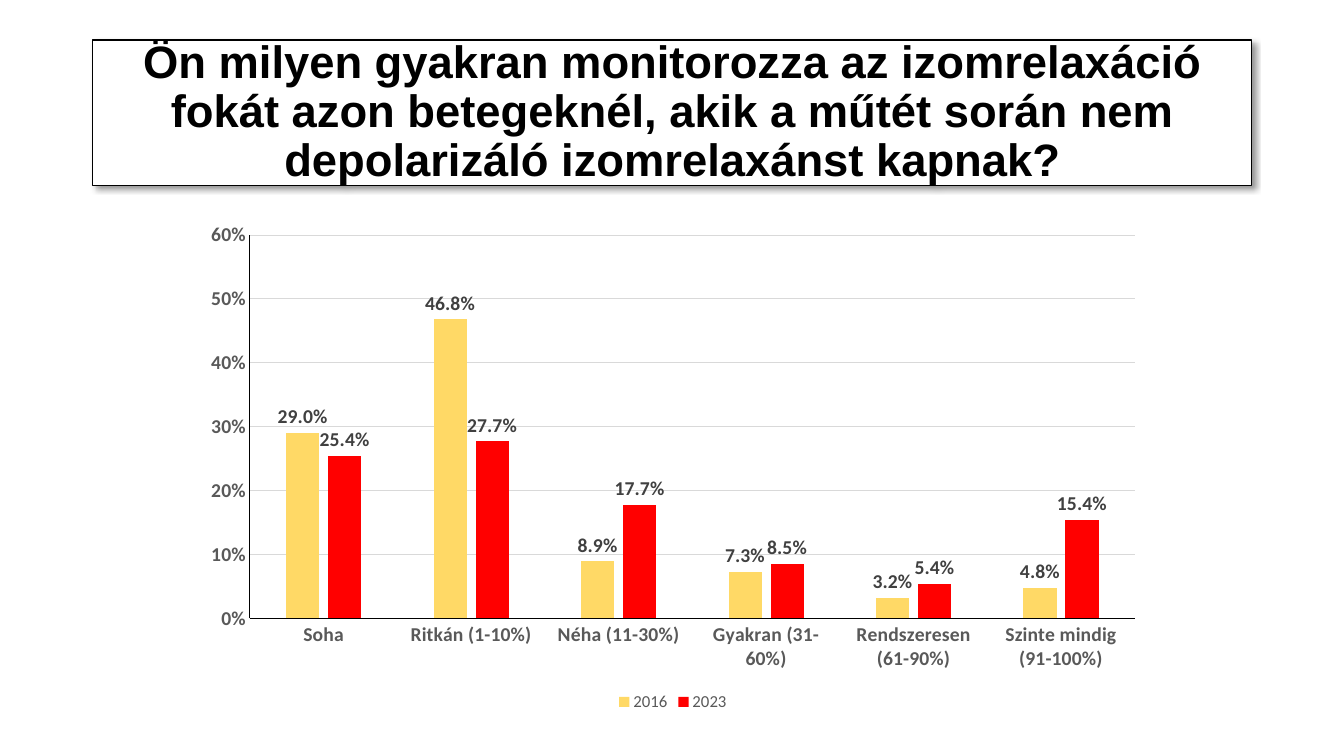
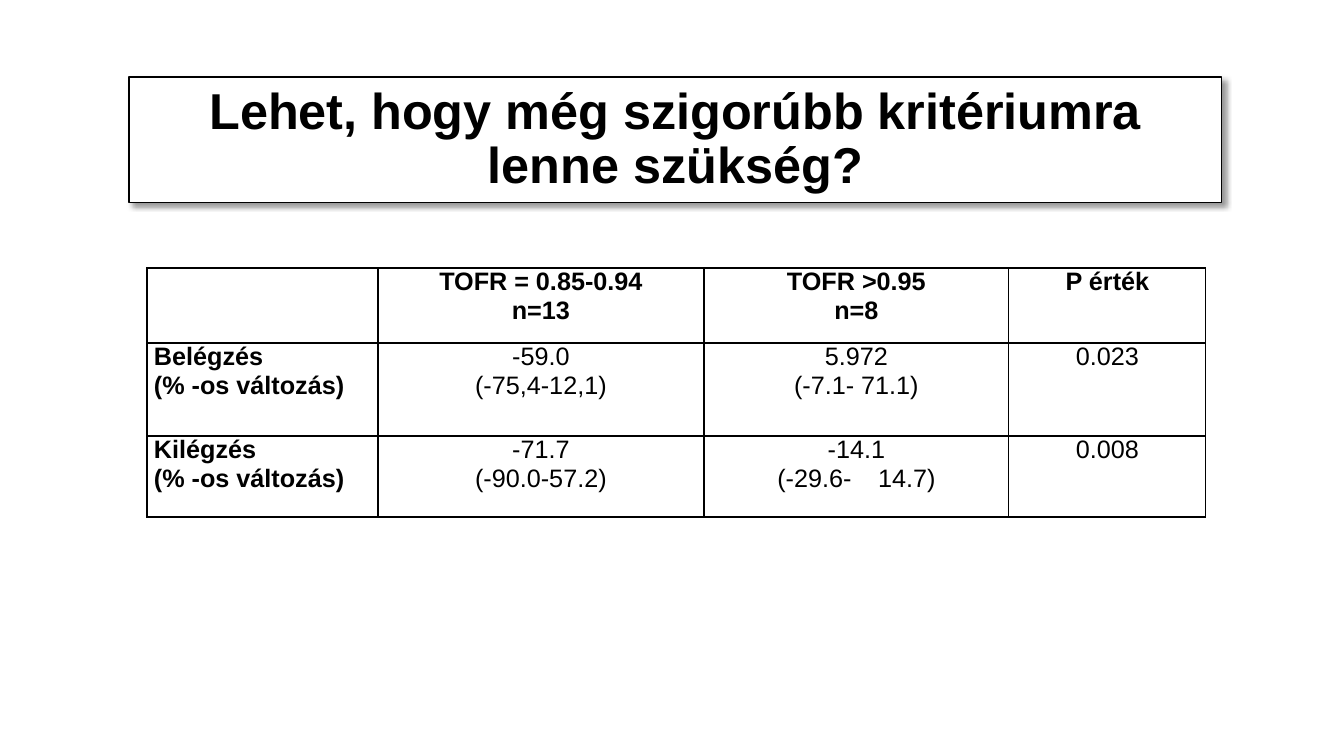
from lxml import etree
from pptx import Presentation
from pptx.chart.data import CategoryChartData
from pptx.dml.color import RGBColor
from pptx.enum.chart import (XL_CHART_TYPE, XL_LABEL_POSITION as LabelPos,
                             XL_LEGEND_POSITION as LegendPos, XL_TICK_MARK as Tick)
from pptx.enum.text import MSO_ANCHOR as Anchor, MSO_AUTO_SIZE as AutoSize, PP_ALIGN as Align
from pptx.oxml import parse_xml
from pptx.oxml.ns import nsdecls, qn
from pptx.util import Pt

SLIDE_W, SLIDE_H = 1344, 756
PX = 12192000 / SLIDE_W
TITLE_ONLY = 5

COLORS = {
    "white": "FFFFFF", "black": "000000", "grid": "D9D9D9",
    "axis_text": "595959", "label_text": "404040",
    "yellow": "FFD966", "red": "FF0000",
}

FREQUENCY = {
    "title": "Ön milyen gyakran monitorozza az izomrelaxáció fokát azon betegeknél, "
             "akik a műtét során nem depolarizáló izomrelaxánst kapnak?",
    "title_size": 32.4,
    "title_box": (93, 40, 1159, 146),
    "chart_box": (192, 213, 962, 503),
    "categories": ["Soha", "Ritkán (1-10%)", "Néha (11-30%)", "Gyakran (31-60%)",
                   "Rendszeresen (61-90%)", "Szinte mindig (91-100%)"],
    "series": [
        ("2016", "yellow", [0.29, 0.468, 0.089, 0.073, 0.032, 0.048]),
        ("2023", "red", [0.254, 0.277, 0.177, 0.085, 0.054, 0.154]),
    ],
}

CRITERION = {
    "title": "Lehet, hogy még szigorúbb kritériumra lenne szükség?",
    "title_size": 36,
    "title_box": (129, 77, 1093, 126),
    "table_at": (147, 268),
    "col_widths": [231, 326, 305, 197],
    "row_heights": [75, 93, 81],
    "rows": [
        ["", "TOFR = 0.85-0.94\nn=13", "TOFR >0.95\nn=8", "P érték"],
        ["Belégzés\n(% -os változás)", "-59.0\n(-75,4-12,1)", "5.972\n(-7.1- 71.1)", "0.023"],
        ["Kilégzés\n(% -os változás)", "-71.7\n(-90.0-57.2)", "-14.1\n(-29.6-\t14.7)", "0.008"],
    ],
}


def px(n):
    return round(n * PX)


def rgb(name):
    return RGBColor.from_string(COLORS[name])


def style_font(font, size, color="black", bold=False, name="Arial"):
    font.name, font.size, font.bold = name, Pt(size), bold
    font.color.rgb = rgb(color)


def style_line(line, color="black", width=0.75):
    line.color.rgb = rgb(color)
    line.width = Pt(width)


def write(tf, text, align=Align.LEFT, spacing=None, **font):
    """Fill a text frame, one paragraph per line of text."""
    for i, line in enumerate(text.split("\n")):
        p = tf.add_paragraph() if i else tf.paragraphs[0]
        p.alignment = align
        if spacing:
            p.line_spacing = spacing
        r = p.add_run()
        r.text = line
        style_font(r.font, **font)


def add_shadow(shape):
    shape.shadow.inherit = False
    effects = shape.element.spPr.find(qn("a:effectLst"))
    effects.append(parse_xml(
        f'<a:outerShdw {nsdecls("a")} blurRad="{Pt(4)}" dist="{Pt(3)}" dir="{45 * 60000}" '
        f'algn="tl" rotWithShape="0"><a:srgbClr val="{COLORS["black"]}">'
        '<a:alpha val="40000"/></a:srgbClr></a:outerShdw>'))


def add_titled_slide(prs, content):
    s = prs.slides.add_slide(prs.slide_layouts[TITLE_ONLY])
    title = s.shapes.title
    title.left, title.top, title.width, title.height = map(px, content["title_box"])
    title.fill.solid()
    title.fill.fore_color.rgb = rgb("white")
    style_line(title.line)
    add_shadow(title)
    tf = title.text_frame
    tf.word_wrap, tf.auto_size = True, AutoSize.NONE
    tf.vertical_anchor = Anchor.MIDDLE
    write(tf, content["title"], align=Align.CENTER, spacing=0.9,
          size=content["title_size"], bold=True)
    return s


def add_frequency_chart(s, content):
    data = CategoryChartData(number_format="0.0%")
    data.categories = content["categories"]
    for name, _, values in content["series"]:
        data.add_series(name, values)
    chart = s.shapes.add_chart(XL_CHART_TYPE.COLUMN_CLUSTERED,
                               *map(px, content["chart_box"]), data).chart
    chart.has_title = False
    style_font(chart.font, 10, name="Calibri")

    for axis in (chart.category_axis, chart.value_axis):
        axis.major_tick_mark = axis.minor_tick_mark = Tick.NONE
        style_font(axis.tick_labels.font, 14, "axis_text", True, "Calibri")
        style_line(axis.format.line)
    axis = chart.value_axis
    axis.minimum_scale, axis.maximum_scale, axis.major_unit = 0, 0.6, 0.1
    axis.tick_labels.number_format = "0%"
    axis.tick_labels.number_format_is_linked = False
    style_line(axis.major_gridlines.format.line, "grid")

    chart.has_legend = True
    chart.legend.position = LegendPos.BOTTOM
    chart.legend.include_in_layout = False
    style_font(chart.legend.font, 12, "axis_text", name="Calibri")

    plot = chart.plots[0]
    plot.gap_width, plot.overlap, plot.vary_by_categories = 219, -27, False
    for series, (_, color, _) in zip(plot.series, content["series"]):
        series.format.fill.solid()
        series.format.fill.fore_color.rgb = rgb(color)
        labels = series.data_labels
        labels.show_value, labels.position = True, LabelPos.OUTSIDE_END
        labels.number_format, labels.number_format_is_linked = "0.0%", False
        style_font(labels.font, 14, "label_text", True, "Calibri")


def add_cell_borders(cell):
    tcPr = cell._tc.get_or_add_tcPr()
    for side in ("a:lnL", "a:lnR", "a:lnT", "a:lnB"):
        ln = etree.SubElement(tcPr, qn(side), w=str(Pt(1)))
        fill = etree.SubElement(ln, qn("a:solidFill"))
        etree.SubElement(fill, qn("a:srgbClr"), val=COLORS["black"])


def add_result_table(s, content):
    rows, widths, heights = content["rows"], content["col_widths"], content["row_heights"]
    box = (*content["table_at"], sum(widths), sum(heights))
    table = s.shapes.add_table(len(rows), len(widths), *map(px, box)).table
    table.first_row = table.horz_banding = False
    for col, width in zip(table.columns, widths):
        col.width = px(width)
    for row, height in zip(table.rows, heights):
        row.height = px(height)
    for i, texts in enumerate(rows):
        for j, text in enumerate(texts):
            cell = table.cell(i, j)
            add_cell_borders(cell)
            cell.fill.solid()
            cell.fill.fore_color.rgb = rgb("white")
            cell.margin_left = cell.margin_right = px(7)
            cell.margin_top = cell.margin_bottom = 0
            if text:
                write(cell.text_frame, text, align=Align.CENTER if j else Align.LEFT,
                      size=18, bold=i == 0 or j == 0)


def main():
    prs = Presentation()
    prs.slide_width, prs.slide_height = px(SLIDE_W), px(SLIDE_H)
    add_frequency_chart(add_titled_slide(prs, FREQUENCY), FREQUENCY)
    add_result_table(add_titled_slide(prs, CRITERION), CRITERION)
    prs.save("out.pptx")


if __name__ == "__main__":
    main()
